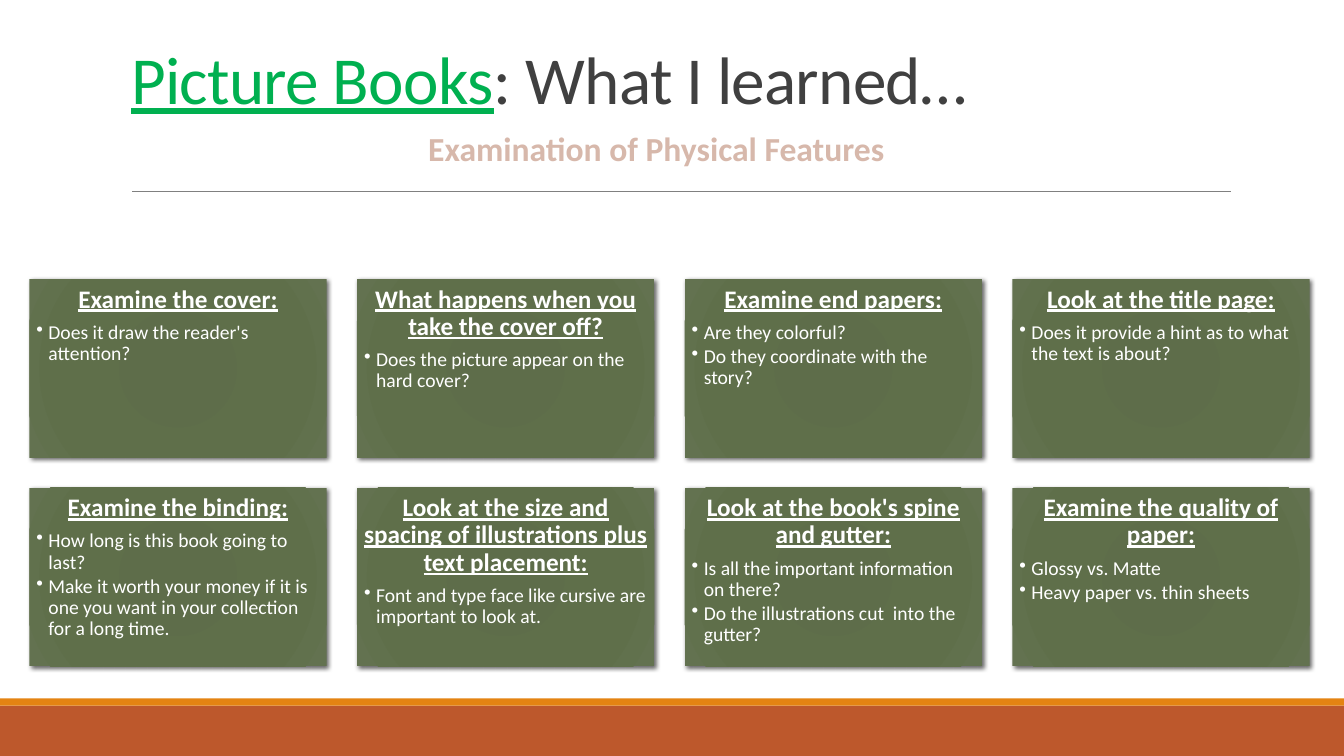
from pptx import Presentation
from pptx.dml.color import RGBColor
from pptx.enum.shapes import MSO_CONNECTOR, MSO_SHAPE
from pptx.enum.text import MSO_ANCHOR, MSO_AUTO_SIZE, PP_ALIGN
from pptx.oxml import parse_xml
from pptx.oxml.ns import nsdecls, qn
from pptx.util import Inches, Pt
from lxml.etree import SubElement

COLORS = {
    "band": "BD582C",
    "stripe": "E48312",
    "rule": "808080",
    "title": "404040",
    "topic": "00B050",
    "subtitle": "D7B8AB",
    "text": "FFFFFF",
    "shadow": "000000",
}
CARD_STOPS = [(0, "5D6D48"), (34, "5E6D4A"), (70, "5F6F4A"), (100, "637250")]

CARDS = [
    ("Examine the cover:", ["Does it draw the reader's attention?"]),
    ("What happens when you take the cover off?",
     ["Does the picture appear on the hard cover?"]),
    ("Examine end papers:",
     ["Are they colorful?", "Do they coordinate with the story?"]),
    ("Look at the title page:",
     ["Does it provide a hint as to what the text is about?"]),
    ("Examine the binding:",
     ["How long is this book going to last?",
      "Make it worth your money if it is one you want in your collection "
      "for a long time."]),
    ("Look at the size and spacing of illustrations plus text placement:",
     ["Font and type face like cursive are important to look at."]),
    ("Look at the book's spine and gutter:",
     ["Is all the important information on there?",
      "Do the illustrations cut  into the gutter?"]),
    ("Examine the quality of paper:",
     ["Glossy vs. Matte", "Heavy paper vs. thin sheets"]),
]
COLUMNS = 4
LEFT, TOP = 0.29, 2.77
STEP_X, STEP_Y = 3.25, 2.07
CARD_W, CARD_H = 2.95, 1.77


class SlideBuilder:
    def __init__(self, slide, font="Calibri"):
        self.slide = slide
        self.shapes = slide.shapes
        self.font = font

    def style(self, r, size, color, bold=False, underline=False):
        f = r.font
        f.name, f.size, f.bold, f.underline = self.font, Pt(size), bold, underline
        f.color.rgb = RGBColor.from_string(COLORS[color])

    def rect(self, x, y, w, h, color=None):
        sp = self.shapes.add_shape(MSO_SHAPE.RECTANGLE, Inches(x), Inches(y),
                                   Inches(w), Inches(h))
        sp.shadow.inherit = False
        sp.line.fill.background()
        if color:
            sp.fill.solid()
            sp.fill.fore_color.rgb = RGBColor.from_string(COLORS[color])
        return sp

    def rule(self, x1, x2, y):
        line = self.shapes.add_connector(MSO_CONNECTOR.STRAIGHT, Inches(x1),
                                         Inches(y), Inches(x2), Inches(y))
        line.line.color.rgb = RGBColor.from_string(COLORS["rule"])
        line.line.width = Pt(0.5)
        SubElement(line._element.spPr, qn("a:effectLst"))

    def title(self, x, y, w, h, parts):
        """Fill the title with (text, colour, underlined) parts."""
        sp = self.shapes.title
        sp.left, sp.top, sp.width, sp.height = map(Inches, (x, y, w, h))
        tf = sp.text_frame
        tf.auto_size = MSO_AUTO_SIZE.NONE
        tf.vertical_anchor = MSO_ANCHOR.BOTTOM
        p = tf.paragraphs[0]
        p.alignment, p.line_spacing = PP_ALIGN.LEFT, 0.85
        for text, color, underline in parts:
            r = p.add_run()
            r.text = text
            self.style(r, 48, color, underline=underline)
            r.font._element.set("spc", "-50")

    def subtitle(self, x, y, w, h, text):
        tf = self.shapes.add_textbox(Inches(x), Inches(y), Inches(w),
                                     Inches(h)).text_frame
        tf.word_wrap = True
        tf.text = text
        p = tf.paragraphs[0]
        p.alignment = PP_ALIGN.CENTER
        self.style(p.runs[0], 24, "subtitle", bold=True)

    def card(self, x, y, heading, questions):
        sp = self.rect(x, y, CARD_W, CARD_H)
        self.card_finish(sp)
        tf = sp.text_frame
        tf.word_wrap = True
        tf.vertical_anchor = MSO_ANCHOR.TOP
        tf.margin_left = tf.margin_right = Inches(0.07)
        tf.margin_top = tf.margin_bottom = Inches(0.07)
        tf.text = "\n".join([heading, *questions])
        head, *bullets = tf.paragraphs
        head.alignment, head.line_spacing = PP_ALIGN.CENTER, 0.9
        head.space_after = Pt(6.3)
        self.style(head.runs[0], 18, "text", bold=True, underline=True)
        for p in bullets:
            self.bullet(p)

    def card_finish(self, sp):
        """Add the radial gradient and the soft shadow."""
        stops = "".join(
            f'<a:gs pos="{pos * 1000}"><a:srgbClr val="{color}"/></a:gs>'
            for pos, color in CARD_STOPS)
        spPr = sp._element.spPr
        spPr.find(qn("a:prstGeom")).addnext(parse_xml(
            f'<a:gradFill {nsdecls("a")} rotWithShape="1"><a:gsLst>{stops}</a:gsLst>'
            '<a:path path="circle"><a:fillToRect l="100000" t="100000" '
            'r="100000" b="100000"/></a:path></a:gradFill>'))
        spPr.find(qn("a:effectLst")).append(parse_xml(
            f'<a:outerShdw {nsdecls("a")} blurRad="{Pt(3)}" dist="{Pt(2)}" '
            f'dir="2700000" rotWithShape="0"><a:srgbClr val="{COLORS["shadow"]}">'
            '<a:alpha val="60000"/></a:srgbClr></a:outerShdw>'))

    def bullet(self, p):
        p.level, p.alignment, p.line_spacing = 1, PP_ALIGN.LEFT, 0.9
        p.space_after = Pt(2.1)
        pPr = p._p.get_or_add_pPr()
        pPr.set("marL", str(Inches(0.12)))
        pPr.set("indent", str(-Inches(0.12)))
        SubElement(pPr, qn("a:buChar")).set("char", "•")
        self.style(p.runs[0], 14, "text")


def main():
    prs = Presentation()
    prs.slide_width, prs.slide_height = Inches(13.33), Inches(7.5)
    s = SlideBuilder(prs.slides.add_slide(prs.slide_layouts[5]))
    s.rect(0, 7, 13.33, 0.5, "band")
    s.rect(0, 6.93, 13.33, 0.07, "stripe")
    s.rule(1.31, 12.21, 1.9)
    s.title(1.2, 0.39, 11, 0.83, [("Picture Books", "topic", True),
                                  (": What I learned…", "title", False)])
    for i, (heading, questions) in enumerate(CARDS):
        row, col = divmod(i, COLUMNS)
        s.card(LEFT + col * STEP_X, TOP + row * STEP_Y, heading, questions)
    s.subtitle(3.38, 1.22, 6.26, 0.5, "Examination of Physical Features")
    prs.save("out.pptx")


if __name__ == "__main__":
    main()
